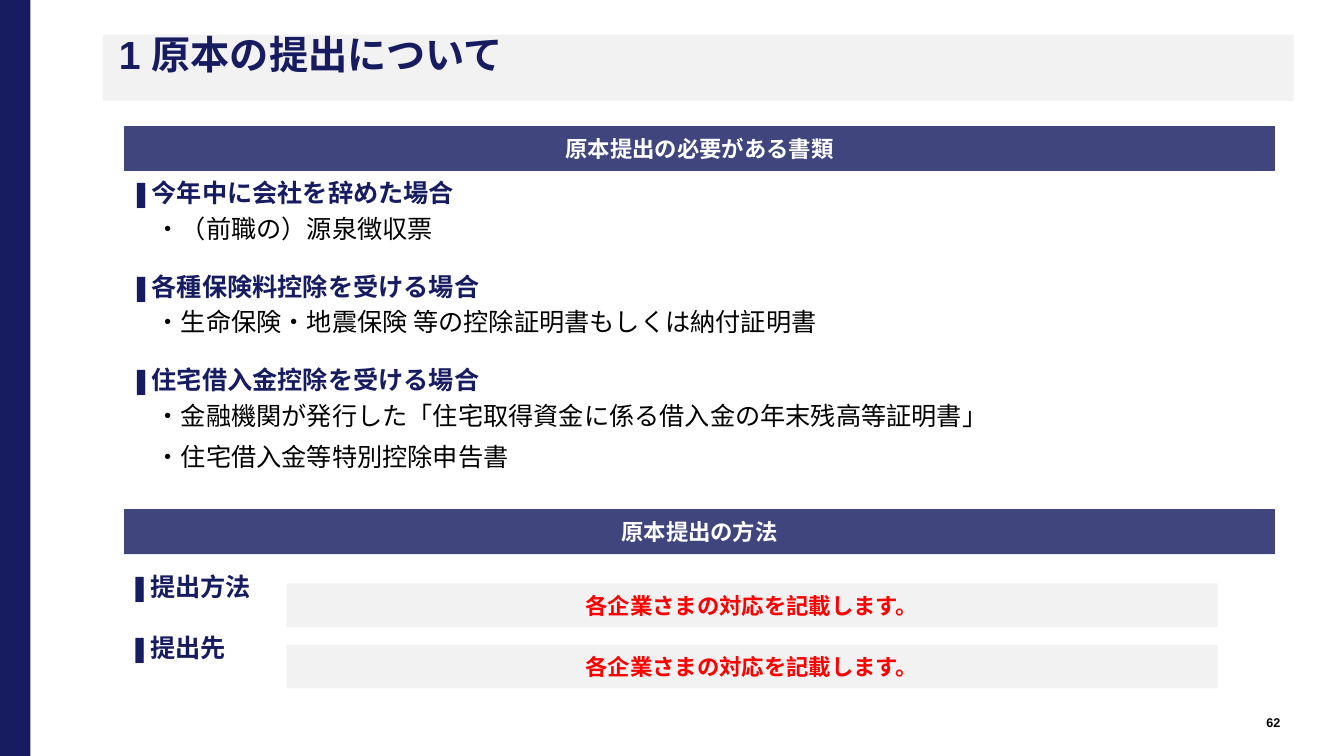
from pptx import Presentation
from pptx.dml.color import RGBColor
from pptx.enum.shapes import MSO_SHAPE as Preset
from pptx.enum.text import MSO_ANCHOR as Anchor, PP_ALIGN as Align
from pptx.util import Pt

COLORS = {
    "navy": "171C61",
    "band": "41457E",
    "panel": "F2F2F2",
    "black": "000000",
    "white": "FFFFFF",
    "red": "FF0000",
}
FONT = "Arial"
MARK = "❚"
TEXT_INSET = 11.5

DOCUMENTS = [
    ("今年中に会社を辞めた場合", ["（前職の）源泉徴収票"]),
    ("各種保険料控除を受ける場合",
     ["生命保険・地震保険 等の控除証明書もしくは納付証明書"]),
    ("住宅借入金控除を受ける場合",
     ["金融機関が発行した「住宅取得資金に係る借入金の年末残高等証明書」",
      "住宅借入金等特別控除申告書"]),
]
METHODS = ["提出方法", "提出先"]
ANSWER = "各企業さまの対応を記載します。"


def color(name):
    return RGBColor.from_string(COLORS[name])


def style(span, size, ink, bold=False):
    span.font.name = FONT
    span.font.size = Pt(size)
    span.font.bold = bold
    span.font.color.rgb = color(ink)


def add_panel(page, box, fill):
    panel = page.shapes.add_shape(Preset.RECTANGLE, *map(Pt, box))
    panel.shadow.inherit = False
    panel.fill.solid()
    panel.fill.fore_color.rgb = color(fill)
    panel.line.fill.background()
    return panel


def add_text_box(page, box):
    frame = page.shapes.add_textbox(*map(Pt, box)).text_frame
    frame.word_wrap = True
    frame.margin_left = Pt(TEXT_INSET)
    return frame


def write_centered(frame, text, size, ink):
    frame.vertical_anchor = Anchor.MIDDLE
    para = frame.paragraphs[0]
    para.text = text
    para.alignment = Align.CENTER
    style(para.runs[0], size, ink, bold=True)


def add_label(page, box, text, fill, ink):
    """Add a filled bar with one bold centred line."""
    write_centered(add_panel(page, box, fill).text_frame, text, 16, ink)


def add_line(frame, parts, space_before):
    """Add a paragraph made of (text, ink, bold) parts."""
    first = frame.paragraphs[0]
    para = frame.add_paragraph() if first.runs else first
    para.line_spacing = 0.9
    para.space_before = Pt(space_before)
    for text, ink, bold in parts:
        span = para.add_run()
        span.text = text
        style(span, 18, ink, bold)


def add_heading(frame, text, space_before):
    add_line(frame, [(MARK, "navy", False), (text, "navy", True)], space_before)


def add_title(page, box, text):
    frame = add_panel(page, box, "panel").text_frame
    frame.word_wrap = True
    frame.vertical_anchor = Anchor.TOP
    frame.margin_left = Pt(TEXT_INSET)
    para = frame.paragraphs[0]
    para.text = text
    para.alignment = Align.LEFT
    para.line_spacing = 0.8
    para.space_before = Pt(10)
    style(para.runs[0], 28, "navy", bold=True)


def add_documents(page, box):
    left, top, width, height = box
    add_label(page, (left, top, width, 32), "原本提出の必要がある書類", "band", "white")
    frame = add_text_box(page, (left - 7, top + 35.5, width + 14, height - 35.5))
    for index, (heading, items) in enumerate(DOCUMENTS):
        add_heading(frame, heading, 22 if index else 10)
        for number, item in enumerate(items):
            add_line(frame, [("　・" + item, "black", False)], 10 if number else 6)


def add_methods(page, box):
    left, top, width, height = box
    add_label(page, (left, top, width, 32), "原本提出の方法", "band", "white")
    frame = add_text_box(page, (left - 8, top + 43, width + 14, height - 43))
    for index, method in enumerate(METHODS):
        add_heading(frame, method, 24 if index else 10)
        answer_box = (left + 116, top + 53 + 44 * index, 665, 31)
        add_label(page, answer_box, ANSWER, "panel", "red")


def add_page_number(page, box, number):
    frame = add_text_box(page, box)
    frame.margin_left = Pt(7.2)
    write_centered(frame, number, 9, "black")


def main():
    deck = Presentation()
    deck.slide_width, deck.slide_height = Pt(960), Pt(540)
    page = deck.slides.add_slide(deck.slide_layouts[6])
    add_panel(page, (0, 0, 21.8, 540), "navy")
    add_title(page, (73.5, 24.75, 850.5, 47.25), "1 原本の提出について")
    add_documents(page, (88.75, 90, 822, 263.5))
    add_methods(page, (88.75, 363.75, 822, 154.5))
    add_page_number(page, (881, 509, 57, 14.5), "62")
    deck.save("out.pptx")


if __name__ == "__main__":
    main()
